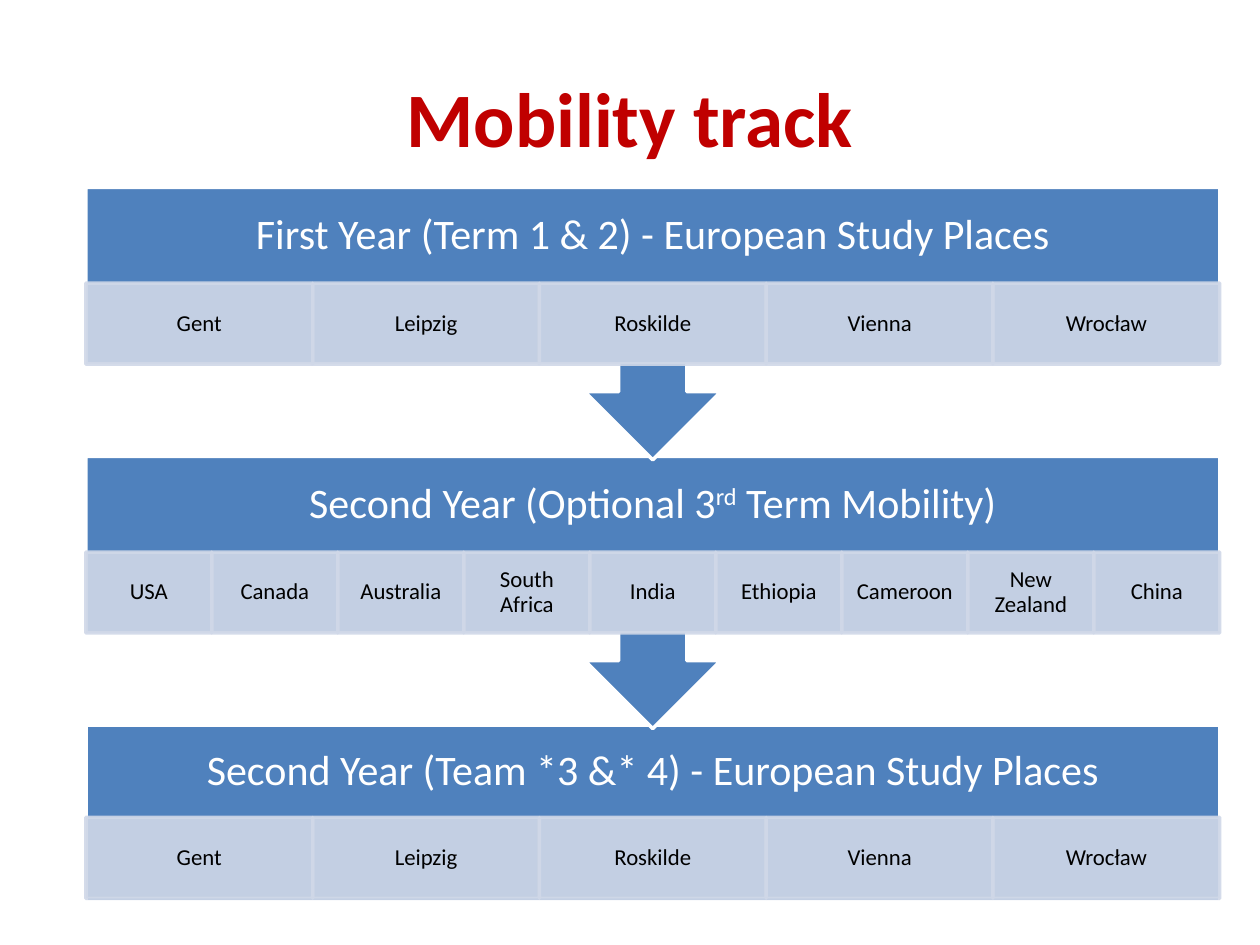
from lxml.etree import SubElement as Sub
from pptx import Presentation as Deck
from pptx.dml.color import RGBColor as Rgb
from pptx.enum.shapes import MSO_SHAPE as Kind
from pptx.enum.text import MSO_ANCHOR as Anchor, PP_ALIGN as Align
from pptx.oxml.ns import qn
from pptx.util import Cm, Pt

HUES = {"red": "C00000", "blue": "4F81BD", "pale": "D0D8E8",
        "white": "FFFFFF", "black": "000000"}
LEFT, WIDE = 1.73, 22.86
BAR, CELL = 3.56, 1.63


class Page:
    font = "Calibri"

    def __init__(self, deck):
        self.slide = deck.slides.add_slide(deck.slide_layouts[5])

    def hue(self, name):
        return Rgb.from_string(HUES[name])

    def place(self, shape, left, top, wide, high):
        shape.left, shape.top = Cm(left), Cm(top)
        shape.width, shape.height = Cm(wide), Cm(high)

    def label(self, shape, parts, size, hue, pads, space=0.9, bold=False):
        frame = shape.text_frame
        frame.text = parts[0]
        frame.word_wrap = True
        frame.vertical_anchor = Anchor.MIDDLE
        (frame.margin_left, frame.margin_top,
         frame.margin_right, frame.margin_bottom) = map(Cm, pads)
        para = frame.paragraphs[0]
        para.alignment = Align.CENTER
        para.line_spacing = space
        for part in parts[1:]:
            para.add_run().text = part
        for spot, run in enumerate(para.runs):
            font = run.font
            font.name, font.size, font.bold = self.font, Pt(size), bold
            font.color.rgb = self.hue(hue)
            if spot % 2:
                run._r.get_or_add_rPr().set("baseline", "30000")

    def title(self, text):
        shape = self.slide.shapes.title
        self.place(shape, 1.27, 0.76, WIDE, 3.18)
        shape.fill.solid()
        shape.fill.fore_color.rgb = self.hue("white")
        self.label(shape, [text], 44, "red", (0.25, 0.13, 0.25, 0.13), 1.0, True)

    def box(self, kind, area, fill, line):
        shape = self.slide.shapes.add_shape(kind, *map(Cm, area))
        shape.shadow.inherit = False
        shape.fill.solid()
        shape.fill.fore_color.rgb = self.hue(fill)
        shape.line.color.rgb = self.hue(line)
        shape.line.width = Pt(2)
        return shape

    def bar(self, kind, top, high, parts, drop):
        shape = self.box(kind, (LEFT, top, WIDE, high), "blue", "white")
        low = BAR - drop + 0.48
        self.label(shape, parts, 24, "white", (0.48, 0.48, 0.48, low))

    def cells(self, top, names):
        wide = WIDE / len(names)
        for col, name in enumerate(names):
            area = (LEFT + col * wide, top, wide, CELL)
            shape = self.box(Kind.RECTANGLE, area, "pale", "pale")
            for tint in shape._element.spPr.iter(qn("a:srgbClr")):
                Sub(tint, qn("a:alpha"), val="90000")
            self.label(shape, [name], 13, "black", (0.25, 0.05, 0.25, 0.05))


def main():
    deck = Deck()
    deck.slide_width, deck.slide_height = Cm(25.4), Cm(19.05)
    page = Page(deck)
    page.title("Mobility track")
    towns = ["Gent", "Leipzig", "Roskilde", "Vienna", "Wrocław"]
    lands = ["USA", "Canada", "Australia", "South Africa", "India",
             "Ethiopia", "Cameroon", "New Zealand", "China"]
    call = Kind.DOWN_ARROW_CALLOUT
    years = [
        (Kind.RECTANGLE, 14.63, BAR, 1.85,
         ["Second Year (Team *3 &* 4) - European Study Places"], towns),
        (call, 9.2, 5.49, 1.93,
         ["Second Year (Optional 3", "rd", " Term Mobility)"], lands),
        (call, 3.78, 5.49, 1.93,
         ["First Year (Term 1 & 2) - European Study Places"], towns),
    ]
    for kind, top, high, drop, parts, names in years:
        page.bar(kind, top, high, parts, drop)
        page.cells(top + drop, names)
    deck.save("out.pptx")


if __name__ == "__main__":
    main()
